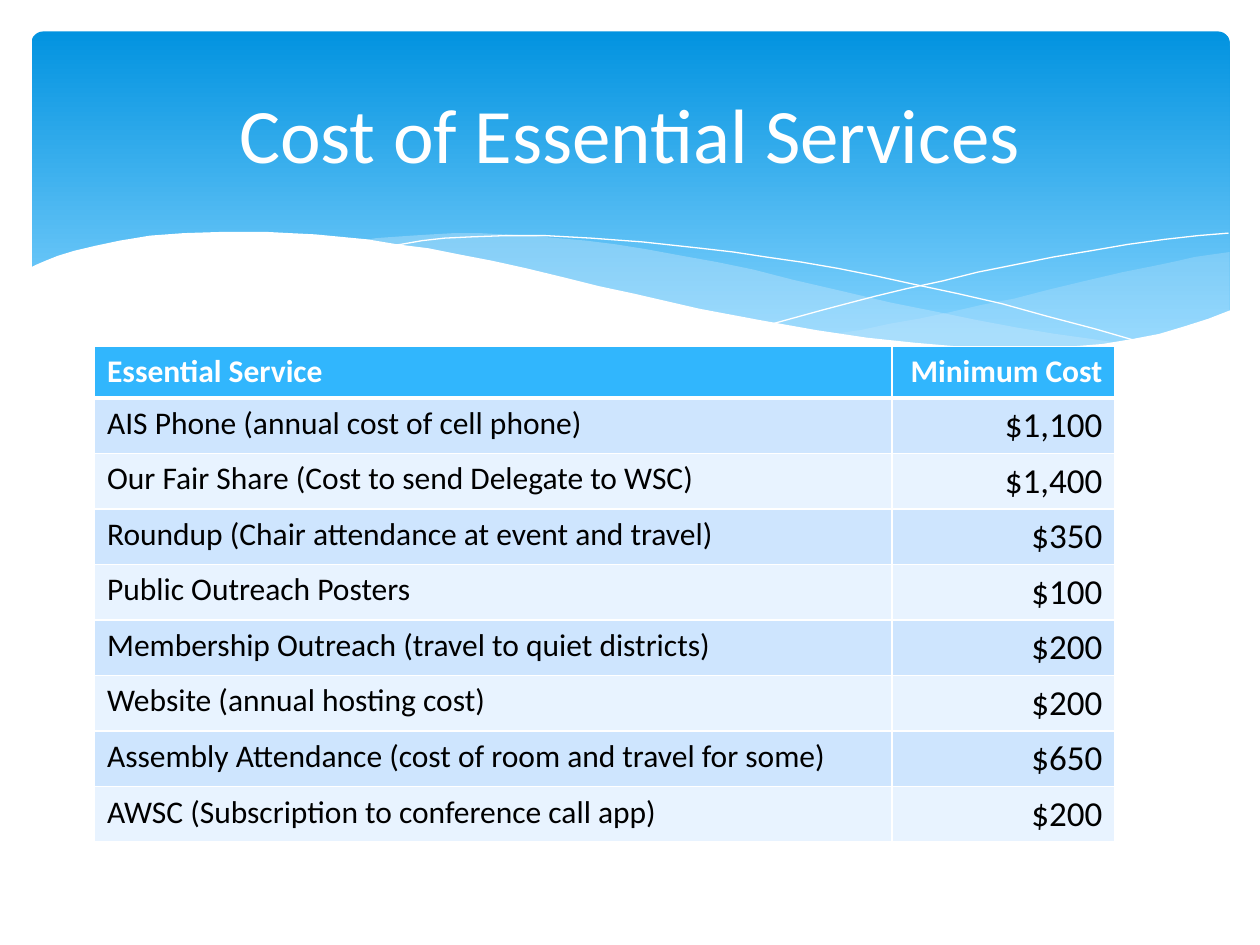
import pptx
import pptx.util
import pptx.dml.color
import pptx.enum.shapes
import pptx.enum.text
import pptx.oxml
import pptx.oxml.ns
import lxml.etree

theme = {
    "font": "Calibri", "title": 44, "label": 18, "cost": 20,
    "white": "FFFFFF", "black": "000000", "deep": "0293E0", "sky": "83D3FE",
    "mist": "C6E7FC", "head": "31B6FD", "bands": ["CEE5FE", "E8F3FF"],
}
align = pptx.enum.text.PP_ALIGN
rgb = pptx.dml.color.RGBColor.from_string
qn = pptx.oxml.ns.qn

deck = pptx.Presentation()
deck.slide_width = pptx.util.Inches(10)
deck.slide_height = pptx.util.Inches(7.5)
col = deck.slide_width // 1000
row = deck.slide_height // 750
slide = deck.slides.add_slide(deck.slide_layouts[6])
shapes = slide.shapes


def write(frame, text, size, color, side=align.LEFT, bold=False):
    para = frame.paragraphs[0]
    para.alignment = side
    run = para.add_run()
    run.text = text
    run.font.name = theme["font"]
    run.font.size = pptx.util.Pt(size)
    run.font.bold = bold
    run.font.color.rgb = rgb(color)


def wave(points, color, alpha=100, line=False):
    pen = shapes.build_freeform(*points[0], scale=(col, row))
    pen.add_line_segments(points[1:], close=not line)
    shape = pen.convert_to_shape()
    shape.shadow.inherit = False
    if line:
        shape.fill.background()
        shape.line.color.rgb = rgb(color)
        shape.line.width = pptx.util.Pt(0)
        return
    shape.line.fill.background()
    shape.fill.solid()
    shape.fill.fore_color.rgb = rgb(color)
    if alpha < 100:
        tint = shape.fill._xPr.find(".//" + qn("a:srgbClr"))
        lxml.etree.SubElement(tint, qn("a:alpha")).set("val", str(alpha * 1000))


panel = shapes.add_shape(
    pptx.enum.shapes.MSO_SHAPE.ROUNDED_RECTANGLE, 25 * col, 25 * row, 951 * col, 270 * row)
panel.adjustments[0] = 0.034
panel.shadow.inherit = False
panel.line.fill.background()
panel.fill.gradient()
panel.fill.gradient_angle = 270
for stop, place, color in zip(panel.fill.gradient_stops, [0, 0.9], ["deep", "sky"]):
    stop.position = place
    stop.color.rgb = rgb(theme[color])

wave([
    (976, 200), (962, 202), (948, 204), (935, 207), (921, 210), (906, 213), (891, 216),
    (861, 223), (832, 230), (805, 237), (779, 242), (753, 248), (729, 253), (706, 257),
    (683, 262), (661, 265), (691, 269), (719, 272), (745, 275), (769, 277), (792, 277),
    (814, 278), (835, 277), (854, 276), (872, 274), (889, 272), (905, 269), (921, 265),
    (935, 262), (949, 257), (963, 252), (976, 247),
], theme["mist"], alpha=29)

wave([
    (893, 273), (866, 269), (837, 265), (807, 260), (775, 254), (741, 247), (706, 240),
    (668, 231), (629, 222), (598, 214), (569, 208), (541, 203), (514, 198), (489, 194),
    (465, 191), (442, 189), (420, 187), (399, 186), (380, 185), (361, 185), (344, 186),
    (328, 187), (313, 188), (299, 189), (286, 191), (323, 196), (362, 203), (404, 211),
    (449, 222), (491, 232), (530, 240), (566, 248), (601, 255), (634, 261), (665, 266),
    (695, 270), (722, 274), (748, 276), (773, 277), (796, 278), (818, 278), (838, 278),
    (857, 277), (876, 275),
], theme["mist"], alpha=40)

wave([
    (309, 195), (318, 194), (335, 191), (353, 189), (374, 188), (401, 187), (433, 187),
    (469, 189), (510, 192), (556, 197), (582, 200), (608, 204), (636, 208), (665, 213),
    (695, 219), (727, 226), (760, 233), (795, 241), (831, 251), (869, 261), (907, 272),
], theme["white"], line=True)

wave([
    (613, 257), (624, 254), (653, 246), (672, 241), (695, 235), (720, 229), (748, 223),
    (776, 216), (806, 210), (836, 204), (866, 199), (895, 194), (924, 190), (951, 187),
    (975, 185),
], theme["white"], line=True)

wave([
    (977, 246), (959, 253), (940, 259), (920, 265), (899, 269), (875, 273), (850, 275),
    (823, 277), (793, 276), (761, 275), (726, 272), (688, 268), (648, 262), (603, 254),
    (555, 245), (503, 233), (475, 227), (447, 220), (418, 213), (391, 207), (365, 202),
    (340, 197), (316, 194), (292, 190), (271, 188), (250, 186), (230, 185), (211, 184),
    (177, 184), (146, 185), (119, 187), (95, 191), (76, 195), (59, 199), (46, 203),
    (36, 207), (29, 210), (23, 213), (23, 329), (977, 329),
], theme["white"])

rows = [
    ("Essential Service", "Minimum Cost"),
    ("AIS Phone (annual cost of cell phone)", "$1,100"),
    ("Our Fair Share (Cost to send Delegate to WSC)", "$1,400"),
    ("Roundup (Chair attendance at event and travel)", "$350"),
    ("Public Outreach Posters", "$100"),
    ("Membership Outreach (travel to quiet districts)", "$200"),
    ("Website (annual hosting cost)", "$200"),
    ("Assembly Attendance (cost of room and travel for some)", "$650"),
    ("AWSC (Subscription to conference call app)", "$200"),
]
table = shapes.add_table(
    len(rows), 2, 75 * col, 275 * row, 810 * col, 41 * row * len(rows)).table
for column, width in zip(table.columns, [633, 177]):
    column.width = width * col

for r, texts in enumerate(rows):
    table.rows[r].height = 41 * row
    head = r == 0
    for c, text in enumerate(texts):
        cell = table.cell(r, c)
        props = cell._tc.get_or_add_tcPr()
        for edge in "LRTB":
            thick = (head and edge == "B") or (r == 1 and edge == "T")
            line = lxml.etree.SubElement(props, qn("a:ln" + edge))
            line.set("w", str(pptx.util.Pt(3 if thick else 1)))
            fill = lxml.etree.SubElement(line, qn("a:solidFill"))
            lxml.etree.SubElement(fill, qn("a:srgbClr")).set("val", theme["white"])
        cell.fill.solid()
        cell.fill.fore_color.rgb = rgb(theme["head"] if head else theme["bands"][(r - 1) % 2])
        write(cell.text_frame, text,
              size=theme["cost"] if c and not head else theme["label"],
              color=theme["white"] if head else theme["black"],
              side=align.RIGHT if c else align.LEFT, bold=head)

title = shapes.add_textbox(50 * col, 37 * row, 900 * col, 137 * row).text_frame
title.word_wrap = True
title.vertical_anchor = pptx.enum.text.MSO_ANCHOR.MIDDLE
write(title, "Cost of Essential Services", size=theme["title"],
      color=theme["white"], side=align.CENTER)

deck.save("out.pptx")
